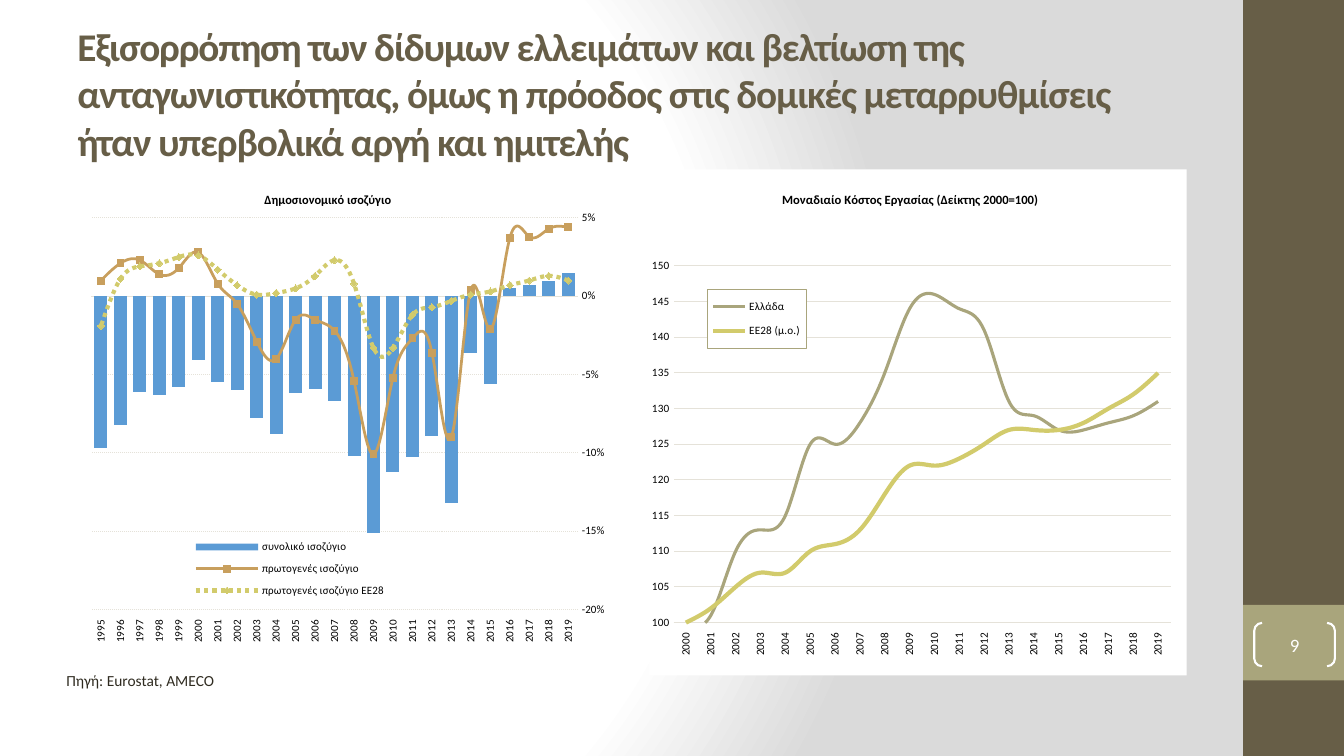
"""Build the slide on twin deficits and competitiveness."""
import pptx
import pptx.chart.data
import pptx.dml.color
import pptx.enum.chart
import pptx.enum.dml
import pptx.enum.shapes
import pptx.enum.text
import pptx.oxml
import pptx.oxml.ns
import pptx.util

Inches, Pt = pptx.util.Inches, pptx.util.Pt
qn = pptx.oxml.ns.qn
Kind = pptx.enum.chart.XL_CHART_TYPE
Mark = pptx.enum.chart.XL_MARKER_STYLE
Dash = pptx.enum.dml.MSO_LINE.ROUND_DOT
Shape = pptx.enum.shapes.MSO_SHAPE
Align = pptx.enum.text.PP_ALIGN
FONT = "Calibri"
COLORS = {"dark": "675E47", "sage": "A9A57C", "white": "FFFFFF", "gray": "DADADA",
          "grid": "E5E2D9", "blue": "5B9BD5", "tan": "C89F5D", "lime": "D2CB6C",
          "ink": "2F2B20", "black": "000000"}

HEAD = ("Εξισορρόπηση των δίδυμων ελλειμάτων και βελτίωση της ανταγωνιστικότητας, "
        "όμως η πρόοδος στις δομικές μεταρρυθμίσεις ήταν υπερβολικά αργή και ημιτελής")
SOURCE = "Πηγή: Eurostat, AMECO"
PAGE = "9"

COSTS = {
    "title": "Μοναδιαίο Κόστος Εργασίας (Δείκτης 2000=100)",
    "title_at": (0.243, 0.04), "left": 6.44, "kind": Kind.LINE,
    "years": range(2000, 2020), "scale": (100, 150, 5), "format": "#,##0",
    "plot": (0.045, 0.191, 0.925, 0.705), "legend": (0.108, 0.237, 0.184, 0.117),
    "series": [
        ("Ελλάδα", [100, 101, 110, 113, 115, 125, 125, 128, 135, 144,
                    146, 144, 141, 131, 129, 127, 127, 128, 129, 131]),
        ("EE28 (μ.ο.)", [100, 102, 105, 107, 107, 110, 111, 113, 118, 122,
                         122, 123, 125, 127, 127, 127, 128, 130, 132, 135])],
    "lines": [("sage", 2.25, None, None), ("lime", 3, None, None)]}

BUDGET = {
    "title": "Δημοσιονομικό ισοζύγιο",
    "title_at": (0.37, 0.04), "left": 0.67, "kind": Kind.COLUMN_CLUSTERED,
    "years": range(2019, 1994, -1), "scale": (-0.2, 0.05, 0.05), "format": "0%",
    "plot": (0.045, 0.096, 0.925, 0.774), "legend": (0.228, 0.717, 0.39, 0.145),
    "series": [
        ("συνολικό ισοζύγιο",
         [0.015, 0.01, 0.007, 0.005, -0.056, -0.036, -0.132, -0.089, -0.103,
          -0.112, -0.151, -0.102, -0.067, -0.059, -0.062, -0.088, -0.078,
          -0.06, -0.055, -0.041, -0.058, -0.063, -0.061, -0.082, -0.097]),
        ("πρωτογενές ισοζύγιο",
         [0.044, 0.043, 0.038, 0.037, -0.021, 0.004, -0.09, -0.036, -0.027,
          -0.052, -0.101, -0.054, -0.022, -0.015, -0.015, -0.04, -0.029,
          -0.005, 0.008, 0.028, 0.018, 0.014, 0.023, 0.021, 0.01]),
        ("πρωτογενές ισοζύγιο ΕΕ28",
         [0.01, 0.013, 0.01, 0.007, 0.003, 0.001, -0.003, -0.007, -0.012,
          -0.033, -0.033, 0.008, 0.023, 0.013, 0.005, 0.002, 0.001,
          0.007, 0.017, 0.026, 0.025, 0.021, 0.019, 0.011, -0.019])],
    "lines": [("tan", 2, None, Mark.SQUARE), ("lime", 3, Dash, Mark.DIAMOND)]}


def rgb(name):
    return pptx.dml.color.RGBColor.from_string(COLORS[name])


def node(tag, body, attrs=""):
    space = pptx.oxml.ns.nsdecls("a", "c")
    return pptx.oxml.parse_xml(f"<{tag} {space} {attrs}>{body}</{tag}>")


def paint(fill, name):
    fill.solid()
    fill.fore_color.rgb = rgb(name)


def style(font, size, color, bold=False):
    font.name, font.size, font.bold = FONT, Pt(size), bold
    font.color.rgb = rgb(color)


def place(parent, after, box, inner=False):
    for old in parent.findall(qn("c:layout")):
        parent.remove(old)
    body = '<c:layoutTarget val="inner"/>' if inner else ""
    body += '<c:xMode val="edge"/><c:yMode val="edge"/>'
    body += "".join(f'<c:{k} val="{v}"/>' for k, v in zip("xywh", box))
    layout = node("c:layout", f"<c:manualLayout>{body}</c:manualLayout>")
    if after is None:
        parent.insert(0, layout)
    else:
        after.addnext(layout)


def solid(name):
    return f'<a:solidFill><a:srgbClr val="{COLORS[name]}"/></a:solidFill>'


def add_bar(slide, top, height, color):
    bar = slide.shapes.add_shape(
        Shape.RECTANGLE, Inches(12.33), Inches(top), Inches(1), Inches(height))
    bar.shadow.inherit = False
    paint(bar.fill, color)
    bar.line.fill.background()


def add_text(slide, text, box, size, color, bold=False):
    area = slide.shapes.add_textbox(*map(Inches, box))
    area.text_frame.text = text
    style(area.text_frame.paragraphs[0].font, size, color, bold)
    return area.text_frame


def split(chart):
    bars = chart.plots[0]._element
    lines = node("c:lineChart", '<c:grouping val="standard"/><c:varyColors val="0"/>')
    for ser in bars.findall(qn("c:ser"))[1:]:
        for flag in ser.findall(qn("c:invertIfNegative")):
            ser.remove(flag)
        lines.append(ser)
    lines.append(node("c:marker", "", 'val="1"'))
    for axis in bars.findall(qn("c:axId")):
        lines.append(node("c:axId", "", f'val="{axis.get("val")}"'))
    bars.addnext(lines)


def draw_lines(plot, looks):
    for ser, (color, width, dash, mark) in zip(plot.series, looks):
        ser.smooth = True
        ser.format.line.width = Pt(width)
        ser.format.line.color.rgb = rgb(color)
        ser.marker.style = mark or Mark.NONE
        if dash:
            ser.format.line.dash_style = dash
        if mark:
            ser.marker.size = 5
            paint(ser.marker.format.fill, color)
            ser.marker.format.line.fill.background()


def set_axes(chart, info):
    years, values = chart.category_axis, chart.value_axis
    for axis in (years, values):
        axis.major_tick_mark = axis.minor_tick_mark = pptx.enum.chart.XL_TICK_MARK.NONE
        style(axis.tick_labels.font, 8, "black")
    years.format.line.color.rgb = rgb("grid")
    years.format.line.width = Pt(0.75)
    years.tick_label_position = pptx.enum.chart.XL_TICK_LABEL_POSITION.LOW
    turn = years._element.find(qn("c:txPr")).find(qn("a:bodyPr"))
    turn.set("rot", "-5400000")
    turn.set("vert", "horz")
    values.minimum_scale, values.maximum_scale, values.major_unit = info["scale"]
    values.format.line.fill.background()
    values.tick_labels.number_format = info["format"]
    values.tick_labels.number_format_is_linked = False
    grid = values.major_gridlines.format.line
    grid.color.rgb, grid.width = rgb("grid"), Pt(0.75)


def add_graph(slide, info):
    data = pptx.chart.data.CategoryChartData()
    data.categories = [str(year) for year in info["years"]]
    for name, values in info["series"]:
        data.add_series(name, values)
    box = map(Inches, (info["left"], 1.68, 5.33, 5.02))
    chart = slide.shapes.add_chart(info["kind"], *box, data).chart
    style(chart.font, 8, "black")
    area = chart._chartSpace.find(qn("c:chart"))
    area.addnext(node("c:spPr", solid("white") + "<a:ln><a:noFill/></a:ln>"))
    chart.has_title = True
    title = chart.chart_title
    title.text_frame.text = info["title"]
    style(title.text_frame.paragraphs[0].font, 9, "black", True)
    place(title._element, title._element.find(qn("c:tx")), info["title_at"])
    chart.has_legend = True
    chart.legend.include_in_layout = False
    key = chart.legend._element
    place(key, key.find(qn("c:legendPos")), info["legend"])
    set_axes(chart, info)
    place(area.find(qn("c:plotArea")), None, info["plot"], True)
    return chart


def main():
    deck = pptx.Presentation()
    deck.slide_width, deck.slide_height = Inches(13.33), Inches(7.5)
    slide = deck.slides.add_slide(deck.slide_layouts[6])
    slide.background.fill.gradient()
    back = next(slide._element.iter(qn("a:gradFill")))
    stops = "".join(f'<a:gs pos="{pos}"><a:srgbClr val="{COLORS[name]}"/></a:gs>'
                    for pos, name in ((0, "white"), (75000, "white"), (100000, "gray")))
    rect = '<a:fillToRect l="20000" t="50000" r="100000" b="50000"/>'
    back[:] = [node("a:gsLst", stops), node("a:path", rect, 'path="circle"')]

    add_bar(slide, 0, 7.5, "dark")
    add_bar(slide, 6, 0.75, "sage")
    head = add_text(slide, HEAD, (0.67, 0.3, 11.11, 1.25), 28, "dark", True)
    head.word_wrap = True
    head.vertical_anchor = pptx.enum.text.MSO_ANCHOR.MIDDLE
    head.paragraphs[0].runs[0]._r.get_or_add_rPr().set("spc", "-80")

    badge = slide.shapes.add_shape(
        Shape.DOUBLE_BRACKET, Inches(12.44), Inches(6.18), Inches(0.8), Inches(0.43))
    badge.shadow.inherit = False
    badge.adjustments[0] = 0.18
    badge.fill.background()
    badge.line.color.rgb, badge.line.width = rgb("white"), Pt(1.5)
    frame = badge.text_frame
    frame.margin_left = frame.margin_right = frame.margin_top = frame.margin_bottom = 0
    frame.vertical_anchor = pptx.enum.text.MSO_ANCHOR.MIDDLE
    frame.text = PAGE
    frame.paragraphs[0].alignment = Align.CENTER
    style(frame.paragraphs[0].font, 13.5, "white")

    costs = add_graph(slide, COSTS)
    draw_lines(costs.plots[0], COSTS["lines"])
    edge = solid("white") + f'<a:ln w="9525">{solid("sage")}</a:ln>'
    costs.legend._element.find(qn("c:overlay")).addnext(node("c:spPr", edge))

    budget = add_graph(slide, BUDGET)
    split(budget)
    bars, lines = budget.plots
    bars.gap_width, bars.vary_by_categories = 50, False
    paint(bars.series[0].format.fill, "blue")
    draw_lines(lines, BUDGET["lines"])
    budget.category_axis.reverse_order = True
    budget.category_axis.crosses = pptx.enum.chart.XL_AXIS_CROSSES.MAXIMUM
    budget.value_axis.major_gridlines.format.line.dash_style = Dash

    add_text(slide, SOURCE, (0.56, 6.61, 1.69, 0.29), 11, "ink").word_wrap = False
    deck.save("out.pptx")


if __name__ == "__main__":
    main()
